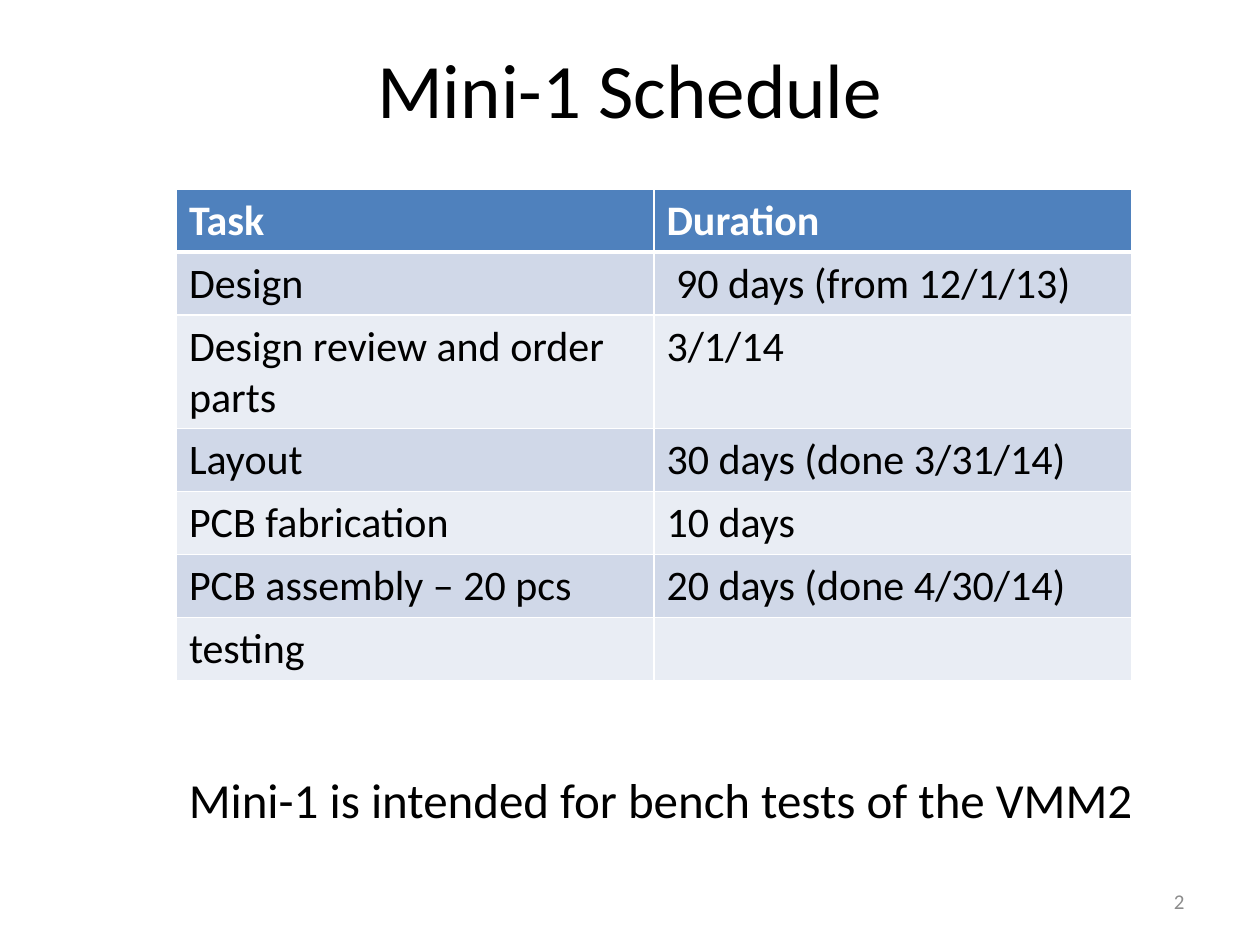
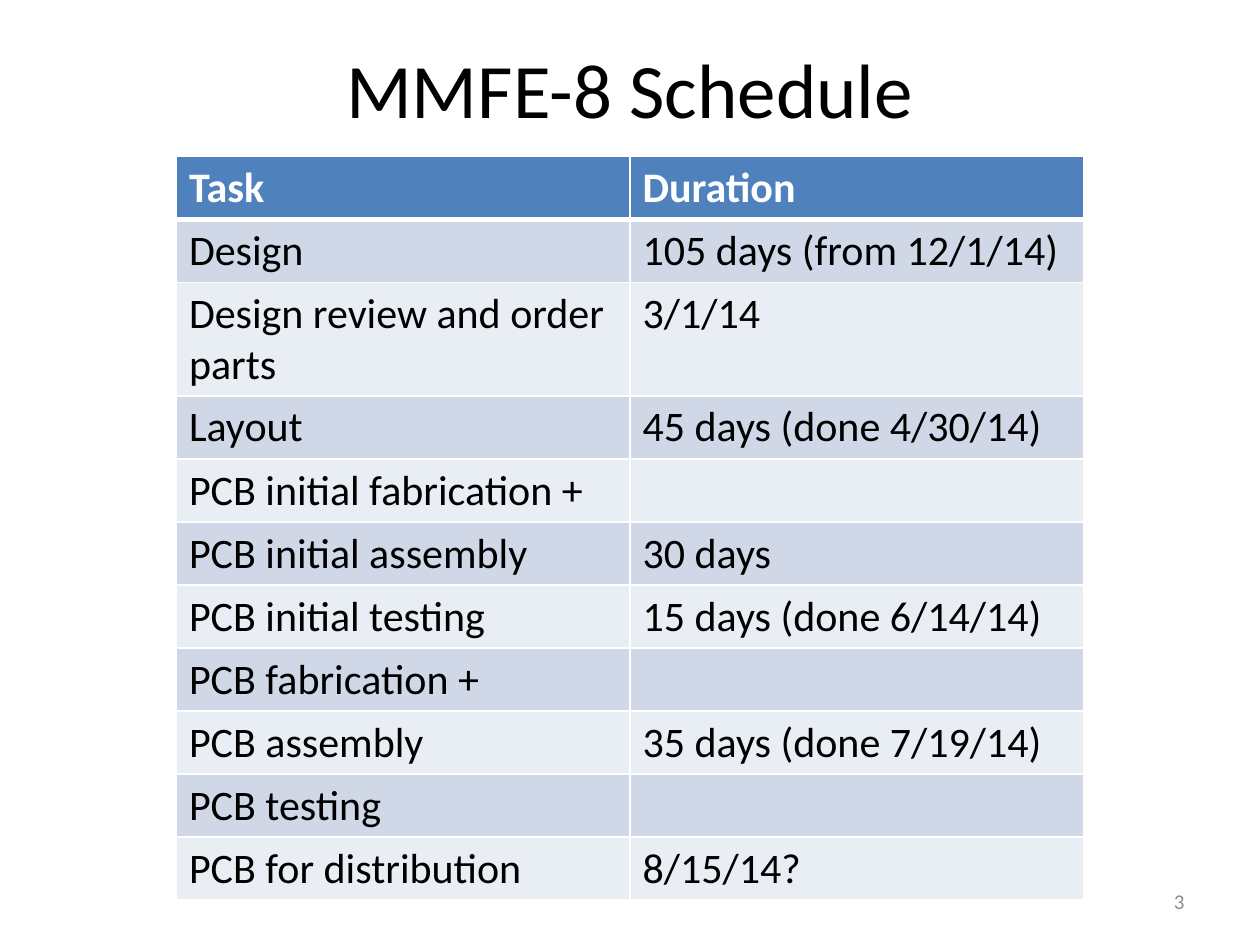
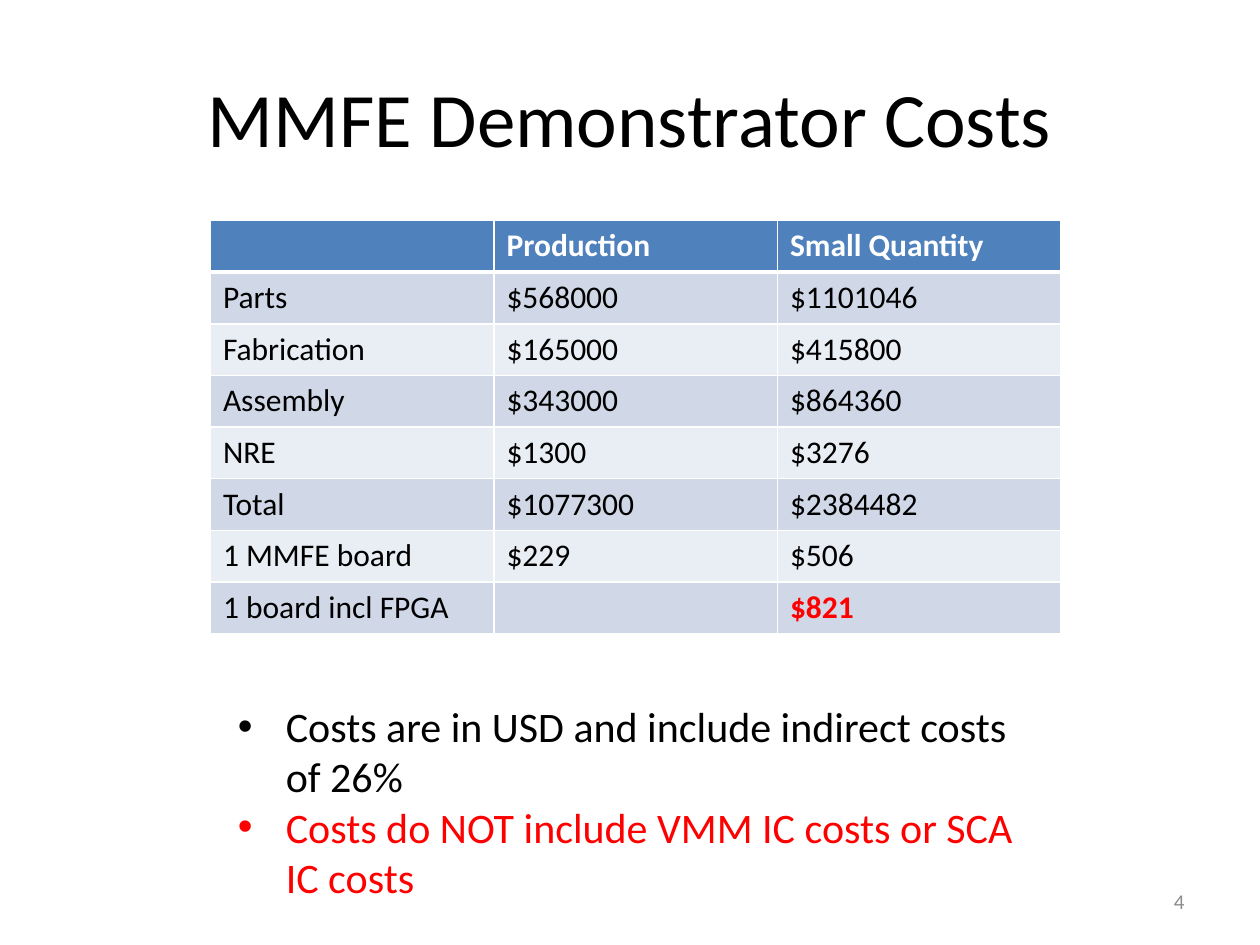
import pptx
import pptx.util
import pptx.dml.color
import pptx.enum.text
from lxml import etree

Inches = pptx.util.Inches
ALIGN = pptx.enum.text.PP_ALIGN
MIDDLE = pptx.enum.text.MSO_ANCHOR.MIDDLE
FONT = "Calibri"
BLACK, WHITE, RED, GREY = "000000", "FFFFFF", "FF0000", "8C8C8C"
HEADER, BANDS = "4F81BD", ("E9EDF4", "D0D8E8")
DRAWING = "http://schemas.openxmlformats.org/drawingml/2006/main"


def write(frame, text, size=24, color=BLACK, bold=False, align=ALIGN.LEFT, bullet=False):
    """Fill the frame's first paragraph, or add one when it already holds text."""
    para = frame.add_paragraph() if frame.text else frame.paragraphs[0]
    para.alignment = align
    span = para.add_run()
    span.text = text
    span.font.name = FONT
    span.font.size = pptx.util.Pt(size)
    span.font.bold = bold
    span.font.color.rgb = pptx.dml.color.RGBColor.from_string(color)
    if bullet:
        properties = para._p.get_or_add_pPr()
        properties.set("marL", str(Inches(0.38)))
        properties.set("indent", str(-Inches(0.38)))
        etree.SubElement(properties, f"{{{DRAWING}}}buFont", typeface="Arial")
        etree.SubElement(properties, f"{{{DRAWING}}}buChar", char="•")


def style_cell(cell, color, bottom_width):
    """Give a cell its fill and white borders."""
    properties = cell._tc.get_or_add_tcPr()
    for side, width in (("L", 1), ("R", 1), ("T", 1), ("B", bottom_width)):
        line = etree.SubElement(properties, f"{{{DRAWING}}}ln{side}", w=str(pptx.util.Pt(width)))
        paint = etree.SubElement(line, f"{{{DRAWING}}}solidFill")
        etree.SubElement(paint, f"{{{DRAWING}}}srgbClr", val=WHITE)
    cell.fill.solid()
    cell.fill.fore_color.rgb = pptx.dml.color.RGBColor.from_string(color)


mini_schedule = [
    ("Task", "Duration"),
    ("Design", " 90 days (from 12/1/13)"),
    ("Design review and order parts", "3/1/14"),
    ("Layout", "30 days (done 3/31/14)"),
    ("PCB fabrication", "10 days"),
    ("PCB assembly – 20 pcs", "20 days (done 4/30/14)"),
    ("testing", ""),
]
mmfe_schedule = [
    ("Task", "Duration"),
    ("Design", "105 days (from 12/1/14)"),
    ("Design review and order parts", "3/1/14"),
    ("Layout", "45 days (done 4/30/14)"),
    ("PCB initial fabrication +", ""),
    ("PCB initial assembly", "30 days"),
    ("PCB initial testing", "15 days (done 6/14/14)"),
    ("PCB fabrication +", ""),
    ("PCB assembly", "35 days (done 7/19/14)"),
    ("PCB testing", ""),
    ("PCB for distribution", "8/15/14?"),
]
costs = [
    ("", "Production", "Small Quantity"),
    ("Parts", "$568000", "$1101046"),
    ("Fabrication", "$165000", "$415800"),
    ("Assembly", "$343000", "$864360"),
    ("NRE", "$1300", "$3276"),
    ("Total", "$1077300", "$2384482"),
    ("1 MMFE board", "$229", "$506"),
    ("1 board incl FPGA", "", "$821"),
]
# title, title top, table rows, table left, table top, column width, text size
slides = [
    ("Mini-1 Schedule", 0.07, mini_schedule, 1.4, 1.5, 3.79, 24),
    ("MMFE-8 Schedule", 0.07, mmfe_schedule, 1.4, 1.24, 3.6, 24),
    ("MMFE Demonstrator Costs", 0.3, costs, 1.67, 1.75, 2.25, 18),
]
highlighted = {"$821"}

deck = pptx.Presentation()
deck.slide_width, deck.slide_height = Inches(10), Inches(7.5)

for number, (title, title_top, rows, left, top, column_width, size) in enumerate(slides, start=2):
    page = deck.slides.add_slide(deck.slide_layouts[5])
    heading = page.shapes.title
    heading.left, heading.top = Inches(0.5), Inches(title_top)
    heading.width, heading.height = Inches(9), Inches(1.25)
    heading.text_frame.vertical_anchor = MIDDLE
    write(heading.text_frame, title, size=44, align=ALIGN.CENTER)

    box = page.shapes.add_textbox(Inches(7.17), Inches(6.95), Inches(2.33), Inches(0.4))
    box.text_frame.word_wrap = True
    box.text_frame.vertical_anchor = MIDDLE
    write(box.text_frame, str(number), size=12, color=GREY, align=ALIGN.RIGHT)

    columns = len(rows[0])
    row_height = 0.41
    table = page.shapes.add_table(
        len(rows), columns, Inches(left), Inches(top),
        Inches(column_width * columns), Inches(row_height * len(rows))).table
    for row_index, row in enumerate(rows):
        is_header = row_index == 0
        for column_index, text in enumerate(row):
            cell = table.cell(row_index, column_index)
            style_cell(cell, HEADER if is_header else BANDS[row_index % 2], 3 if is_header else 1)
            if text:
                color = WHITE if is_header else RED if text in highlighted else BLACK
                write(cell.text_frame, text, size=size, color=color,
                      bold=is_header or text in highlighted)

purpose = deck.slides[0].shapes.add_textbox(Inches(1.4), Inches(6.06), Inches(7.87), Inches(0.57))
purpose.text_frame.word_wrap = False
write(purpose.text_frame, "Mini-1 is intended for bench tests of the VMM2", size=28)

remarks = deck.slides[2].shapes.add_textbox(Inches(1.79), Inches(5.51), Inches(6.47), Inches(2.02))
remarks.text_frame.word_wrap = True
write(remarks.text_frame, "Costs are in USD and include indirect costs of 26%", bullet=True)
write(remarks.text_frame, "Costs do NOT include VMM IC costs or SCA IC costs", color=RED, bullet=True)

deck.save("out.pptx")
